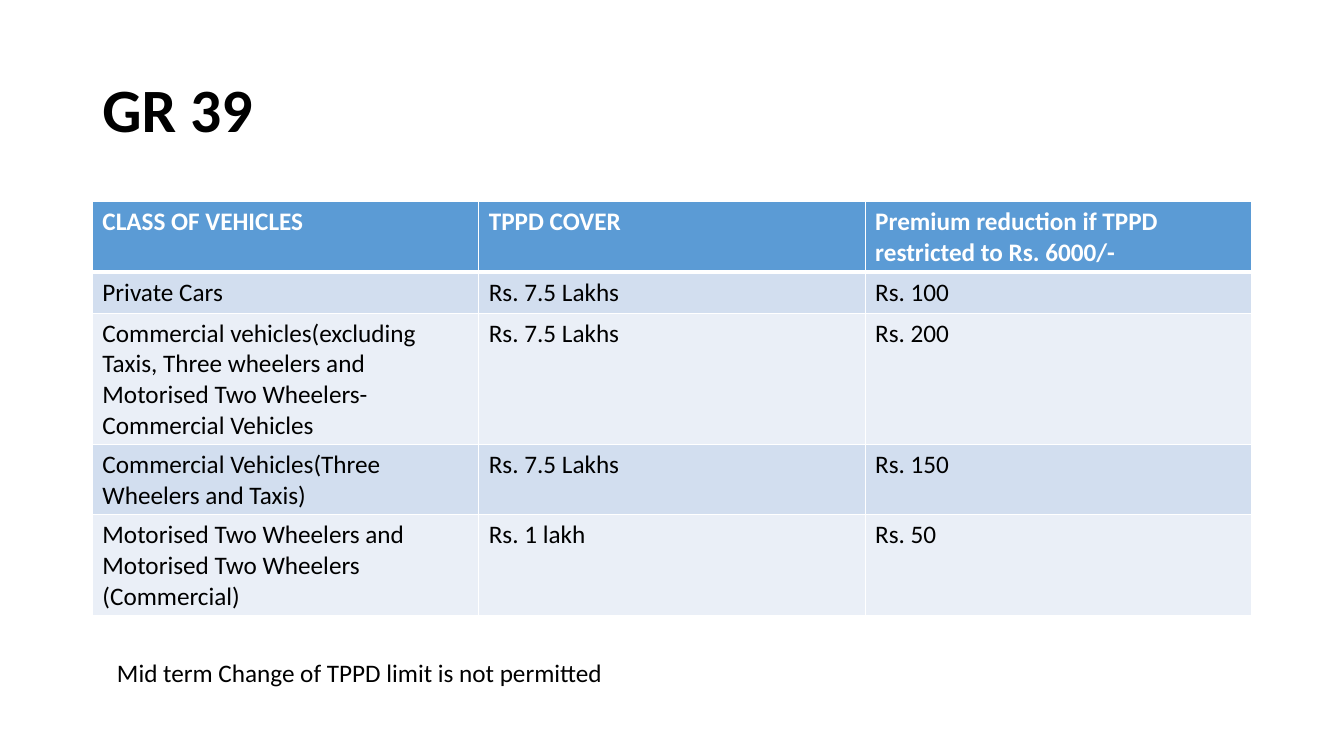
import lxml.etree
import pptx
import pptx.dml.color
import pptx.enum.text
import pptx.oxml.ns
import pptx.util

PX = 9525  # EMU per px, 96 px to the inch
COLORS = {
    "text": "000000",
    "white": "FFFFFF",
    "header": "5B9BD5",
    "odd": "D2DEEF",
    "even": "EAEFF7",
}
TITLE_FORMAT = {"size": 44, "bold": True, "color": "text"}
HEADER_FORMAT = {"size": 18, "bold": True, "color": "white"}
BODY_FORMAT = {"size": 18, "bold": False, "color": "text"}
ROW_HEIGHT = 39
ROWS = [
    ("CLASS OF VEHICLES", "TPPD COVER", "Premium reduction if TPPD restricted to Rs. 6000/-"),
    ("Private Cars", "Rs. 7.5 Lakhs", "Rs. 100"),
    ("Commercial vehicles(excluding Taxis, Three wheelers and Motorised Two Wheelers-Commercial Vehicles",
     "Rs. 7.5 Lakhs", "Rs. 200"),
    ("Commercial Vehicles(Three Wheelers and Taxis)", "Rs. 7.5 Lakhs", "Rs. 150"),
    ("Motorised Two Wheelers and Motorised Two Wheelers (Commercial)", "Rs. 1 lakh", "Rs. 50"),
]


def to_emu(box):
    return [length * PX for length in box]


def rgb(name):
    return pptx.dml.color.RGBColor.from_string(COLORS[name])


def write_text(text_frame, text, text_format):
    paragraph = text_frame.paragraphs[0]
    run = paragraph.add_run()
    run.text = text
    values = {"name": "Calibri", "size": pptx.util.Pt(text_format["size"]), "bold": text_format["bold"]}
    for attribute, value in values.items():
        setattr(run.font, attribute, value)
    run.font.color.rgb = rgb(text_format["color"])
    return paragraph


def add_text(slide, box, text, text_format, anchor="TOP", line_spacing=1.0):
    text_frame = slide.shapes.add_textbox(*to_emu(box)).text_frame
    text_frame.word_wrap = True
    text_frame.vertical_anchor = pptx.enum.text.MSO_ANCHOR[anchor]
    write_text(text_frame, text, text_format).line_spacing = line_spacing


def add_borders(cell, widths):
    properties = cell._tc.get_or_add_tcPr()
    qualified = pptx.oxml.ns.qn
    for side, width in widths.items():
        line = lxml.etree.SubElement(properties, qualified(f"a:ln{side}"), w=str(pptx.util.Pt(width)))
        fill = lxml.etree.SubElement(line, qualified("a:solidFill"))
        lxml.etree.SubElement(fill, qualified("a:srgbClr"), val=COLORS["white"])


def add_cover_table(slide, box):
    frame = slide.shapes.add_table(len(ROWS), len(ROWS[0]), *to_emu(box))
    table = frame.table
    for row_index, texts in enumerate(ROWS):
        # Rows grow to fit their text
        table.rows[row_index].height = ROW_HEIGHT * PX
        is_header = row_index == 0
        fill = "header" if is_header else ("odd" if row_index % 2 else "even")
        widths = {"L": 1, "R": 1, "T": 3 if row_index == 1 else 1, "B": 3 if is_header else 1}
        for column_index, text in enumerate(texts):
            cell = table.cell(row_index, column_index)
            add_borders(cell, widths)
            cell.fill.solid()
            cell.fill.fore_color.rgb = rgb(fill)
            write_text(cell.text_frame, text, HEADER_FORMAT if is_header else BODY_FORMAT)
    frame.height = box[3] * PX


def add_cover_slide(presentation):
    slide = presentation.slides.add_slide(presentation.slide_layouts[6])
    # Title
    add_text(slide, (88, 38, 1104, 139), "GR 39", TITLE_FORMAT, "MIDDLE", 0.9)
    # Cover and premium reduction by vehicle class
    add_cover_table(slide, (88, 192, 1104, 395))
    # Note below the table
    add_text(slide, (102, 621, 1105, 38), "Mid term Change of TPPD limit is not permitted", BODY_FORMAT)


def main():
    presentation = pptx.Presentation()
    presentation.slide_width, presentation.slide_height = to_emu((1280, 720))
    add_cover_slide(presentation)
    presentation.save("out.pptx")


if __name__ == "__main__":
    main()
